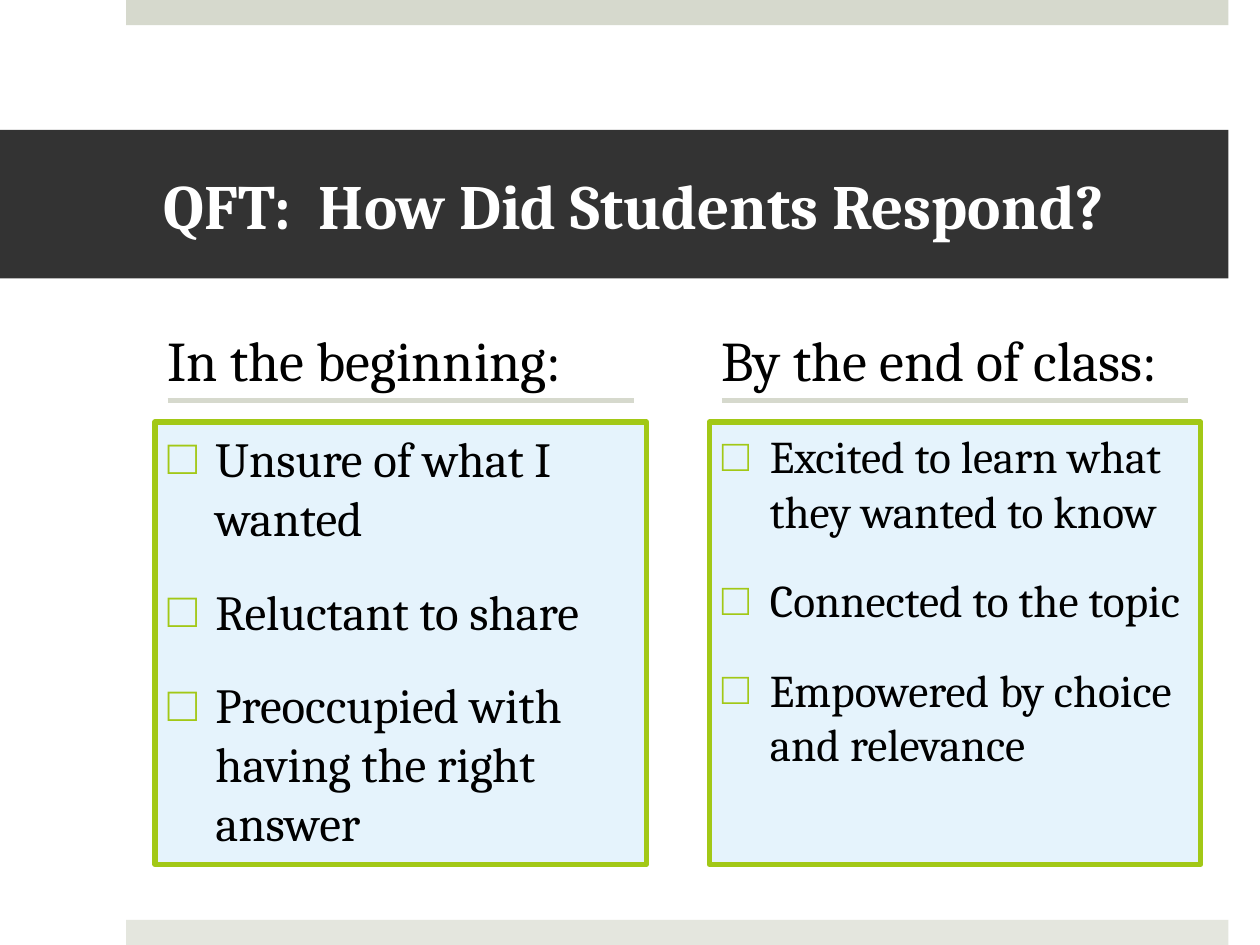
from lxml.etree import SubElement as Sub
from pptx import Presentation
from pptx.dml.color import RGBColor as RGB
from pptx.enum.shapes import MSO_CONNECTOR as Conn, MSO_SHAPE as Shape
from pptx.enum.text import MSO_ANCHOR as Anchor, MSO_AUTO_SIZE as Auto, PP_ALIGN as Align
from pptx.oxml.ns import qn
from pptx.util import Pt

PX = 9144
WHITE = RGB(0xFF, 0xFF, 0xFF)
BLACK = RGB(0, 0, 0)
DARK = RGB(0x33, 0x33, 0x33)
SAGE = RGB(0xD6, 0xD9, 0xCD)
PALE = RGB(0xE4, 0xE6, 0xDE)
LIME = RGB(0xA2, 0xC8, 0x16)
SKY = RGB(0xE5, 0xF3, 0xFC)


def place(item, left, top, width, height):
    spot = {"left": left, "top": top, "width": width, "height": height}
    for key, val in spot.items():
        setattr(item, key, val * PX)


def write(item, lines, size, color, bold, anchor, mark=None):
    frame = item.text_frame
    frame.text = "\n".join(lines)
    for key, val in {"word_wrap": True, "auto_size": Auto.NONE,
                     "vertical_anchor": anchor}.items():
        setattr(frame, key, val)
    for num, para in enumerate(frame.paragraphs):
        if mark:
            props = para._p.get_or_add_pPr()
            props.set("marL", str(38 * PX))
            props.set("indent", str(-38 * PX))
            tint = Sub(props, qn("a:buClr"))
            Sub(tint, qn("a:srgbClr"), val=str(LIME))
            Sub(props, qn("a:buChar"), char=mark)
        para.alignment = Align.LEFT
        para.space_before = Pt(20 if num else 0)
        for key, val in {"name": "Cambria", "size": Pt(size), "bold": bold}.items():
            setattr(para.font, key, val)
        para.font.color.rgb = color


deck = Presentation()
deck.slide_width, deck.slide_height = 1000 * PX, 750 * PX
slide = deck.slides.add_slide(deck.slide_layouts[4])
holders = slide.placeholders

for top, color in ((0, SAGE), (730, PALE)):
    band = slide.shapes.add_shape(Shape.RECTANGLE, 100 * PX, top * PX, 875 * PX, 20 * PX)
    band.shadow.inherit = False
    band.fill.solid()
    band.fill.fore_color.rgb = color
    band.line.fill.background()

title = slide.shapes.title
place(title, 0, 103, 975, 118)
title.fill.solid()
title.fill.fore_color.rgb = DARK
write(title, ["QFT:  How Did Students Respond?"], 36, WHITE, True, Anchor.MIDDLE)
for key, val in {"left": 130, "top": 5, "right": 30, "bottom": 5}.items():
    setattr(title.text_frame, "margin_" + key, val * PX)

parts = (
    ("In the beginning:", 28, [
        "Unsure of what I wanted",
        "Reluctant to share",
        "Preoccupied with having the right answer"]),
    ("By the end of class:", 25.9, [
        "Excited to learn what they wanted to know",
        "Connected to the topic",
        "Empowered by choice and relevance"]),
)
for col, (label, size, points) in enumerate(parts):
    left = 123 + 440 * col
    head, box = holders[1 + 2 * col], holders[2 + 2 * col]
    place(head, left, 221, 390, 96)
    write(head, [label], 32, BLACK, False, Anchor.BOTTOM)
    place(box, left, 335, 390, 351)
    box.fill.solid()
    box.fill.fore_color.rgb = SKY
    box.line.color.rgb = LIME
    box.line.width = Pt(3)
    write(box, points, size, BLACK, False, Anchor.TOP, "□")
    rule = slide.shapes.add_connector(
        Conn.STRAIGHT, (left + 10) * PX, 318 * PX, (left + 380) * PX, 318 * PX)
    rule.line.color.rgb = SAGE
    rule.line.width = Pt(3)
    Sub(rule._element.spPr, qn("a:effectLst"))

deck.save("out.pptx")
